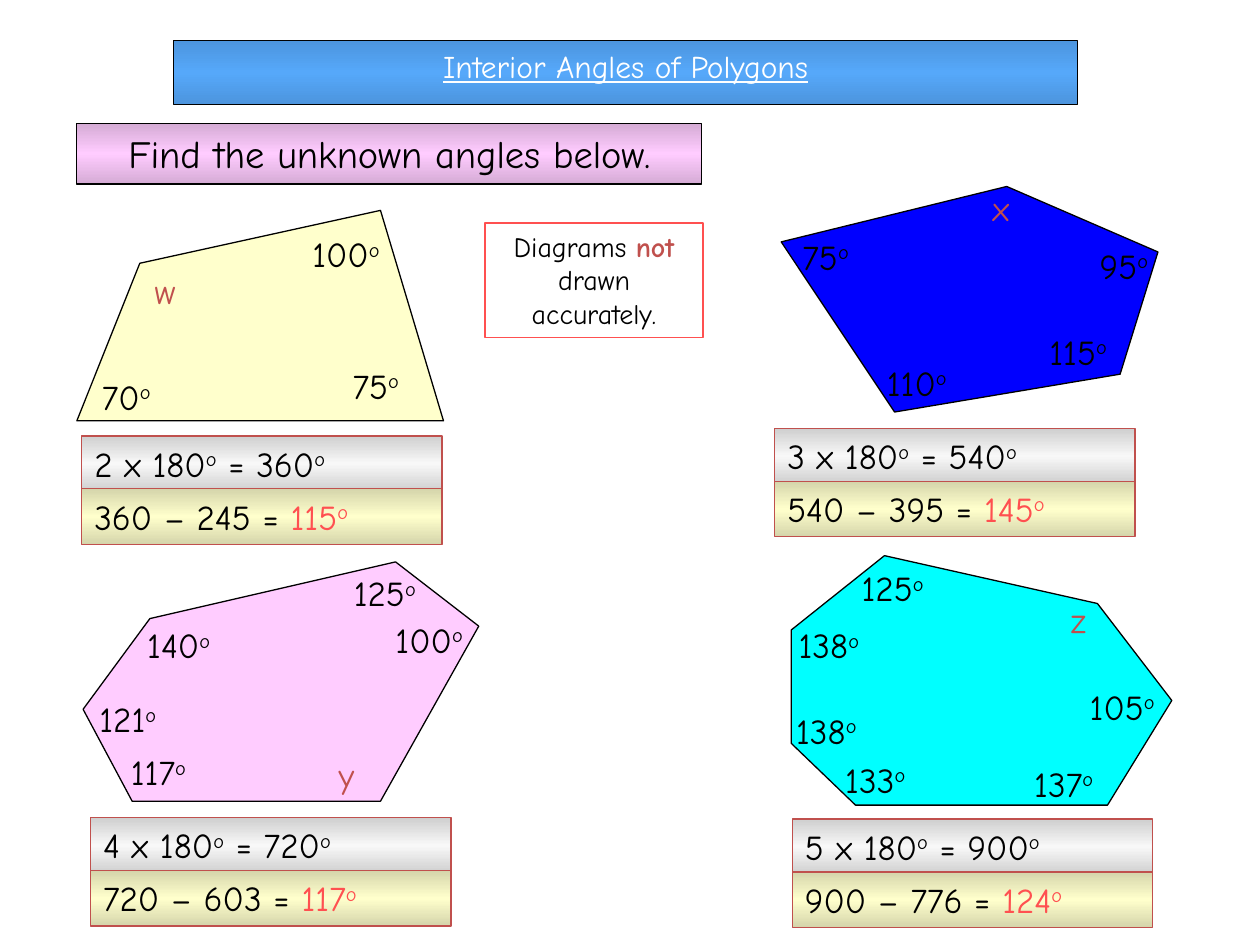
"""Build a worksheet slide on the interior angles of polygons."""
from copy import deepcopy

from pptx import Presentation
from pptx.dml.color import RGBColor
from pptx.enum.shapes import MSO_SHAPE
from pptx.enum.text import MSO_ANCHOR, PP_ALIGN
from pptx.util import Pt

PX = 9144
RECTANGLE = MSO_SHAPE.RECTANGLE
TOP = MSO_ANCHOR.TOP
LEFT, CENTER = PP_ALIGN.LEFT, PP_ALIGN.CENTER
FONT = "Comic Neue"
COLORS = {
    "black": "000000", "white": "FFFFFF", "red": "C0504D", "coral": "FF5050",
    "yellow": "FFFFCC", "blue": "0000FF", "pink": "FFCCFF", "cyan": "00FFFF",
    "sky": "56A8FA", "sky edge": "4C95DE", "pink edge": "D5ABD5",
    "silver": "F8F8F8", "silver edge": "CFCFCF", "yellow edge": "D5D5AB",
}
RGB = {name: RGBColor.from_string(value) for name, value in COLORS.items()}


def write(box, spans, size, color="black", align=LEFT):
    frame = box.text_frame
    frame.word_wrap = True
    frame.vertical_anchor = TOP
    para = frame.paragraphs[0]
    para.alignment = align
    para.font.name = FONT
    para.font.size = Pt(size)
    para.font.color.rgb = RGB[color]
    for text, accent in spans:
        span = para.add_run()
        span.text = text
        if accent:
            span.font.color.rgb = RGB[accent]
        if text == "o":
            span.font._element.set("baseline", "30000")
    return para


def add_panel(x, y, width, height, tone, outline):
    box = slide.shapes.add_shape(RECTANGLE, x * PX, y * PX, width * PX, height * PX)
    box.shadow.inherit = False
    box.line.color.rgb = RGB[outline]
    box.line.width = Pt(0.75)
    if tone is None:
        box.fill.background()
        return box
    box.fill.gradient()
    box.fill.gradient_angle = 90
    first_stop = box.fill.gradient_stops[0]._gs
    first_stop.addnext(deepcopy(first_stop))
    shades = (f"{tone} edge", tone, f"{tone} edge")
    for stop, shade, position in zip(box.fill.gradient_stops, shades, (0, 0.5, 1)):
        stop.color.rgb = RGB[shade]
        stop.position = position
    return box


deck = Presentation()
deck.slide_width = 1000 * PX
deck.slide_height = 750 * PX
slide = deck.slides.add_slide(deck.slide_layouts[6])

title = add_panel(138, 32, 717, 51, "sky", "black")
para = write(title, [("Interior Angles of Polygons", None)], 18, "white", CENTER)
para.font.underline = True

task = add_panel(61, 98, 496, 48, "pink", "black")
write(task, [("Find the unknown angles below.", None)], 22, align=CENTER)

notice = add_panel(385, 177, 173, 91, None, "coral")
notice_spans = [("Diagrams ", None), ("not ", "red"), ("drawn accurately.", None)]
para = write(notice, notice_spans, 16, align=CENTER)
para.runs[1].font.bold = True

polygons = [
    {"fill": "yellow",
     "corners": [(61, 334), (352, 334), (302, 167), (111, 209)],
     "angles": [("75", 270, 284, 73), ("100", 238, 180, 92), ("70", 71, 293, 92)],
     "unknown": ("w", 113, 209),
     "working": (65, 346), "triangles": 2, "known": 245},
    {"fill": "blue",
     "corners": [(710, 327), (889, 297), (919, 200), (799, 148), (620, 192)],
     "angles": [("115", 823, 257, 92), ("110", 694, 282, 92),
                ("75", 627, 182, 92), ("95", 863, 189, 70)],
     "unknown": ("x", 778, 143),
     "working": (615, 340), "triangles": 3, "known": 395},
    {"fill": "pink",
     "corners": [(105, 636), (302, 636), (380, 497), (314, 446), (119, 491), (66, 563)],
     "angles": [("117", 94, 591, 92), ("121", 69, 549, 92), ("100", 304, 486, 92),
                ("125", 271, 449, 92), ("140", 107, 490, 92)],
     "unknown": ("y", 259, 593),
     "working": (72, 649), "triangles": 4, "known": 603},
    {"fill": "cyan",
     "corners": [(679, 639), (879, 639), (930, 556), (871, 479),
                 (702, 441), (628, 500), (628, 590)],
     "angles": [("133", 661, 597, 92), ("137", 811, 600, 92), ("138", 622, 558, 92),
                ("138", 624, 490, 92), ("125", 674, 445, 92), ("105", 855, 539, 92)],
     "unknown": ("z", 840, 470),
     "working": (629, 650), "triangles": 5, "known": 776},
]

for polygon in polygons:
    start, *others = polygon["corners"]
    builder = slide.shapes.build_freeform(*start, scale=PX)
    builder.add_line_segments(others, close=True)
    outline = builder.convert_to_shape()
    outline.shadow.inherit = False
    outline.fill.solid()
    outline.fill.fore_color.rgb = RGB[polygon["fill"]]
    outline.line.color.rgb = RGB["black"]
    outline.line.width = Pt(0.75)

    for angle, x, y, width in polygon["angles"]:
        label = slide.shapes.add_textbox(x * PX, y * PX, width * PX, 43 * PX)
        write(label, [(angle, None), ("o", None)], 20)

    letter, x, y = polygon["unknown"]
    label = slide.shapes.add_textbox(x * PX, y * PX, 54 * PX, 43 * PX)
    write(label, [(letter, None)], 20, "red")

    x, y = polygon["working"]
    triangles, known = polygon["triangles"], polygon["known"]
    total = triangles * 180
    total_spans = [(f"{triangles} x 180", None), ("o", None),
                   (f" = {total}", None), ("o", None)]
    answer_spans = [(f"{total} – {known} = ", None),
                    (str(total - known), "coral"), ("o", "coral")]
    write(add_panel(x, y, 286, 44, "silver", "red"), total_spans, 20)
    write(add_panel(x, y + 42, 286, 44, "yellow", "red"), answer_spans, 20)

deck.save("out.pptx")
